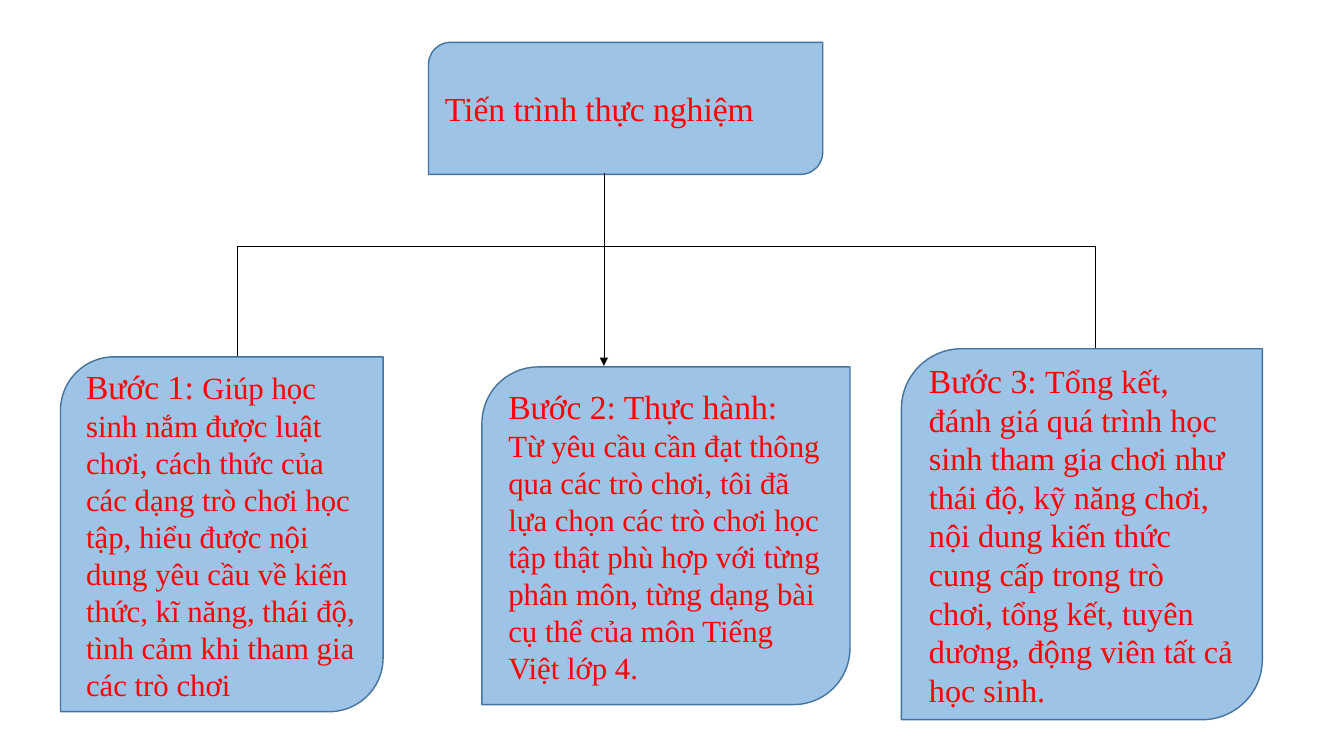
from dataclasses import dataclass

from lxml.etree import SubElement
from pptx import Presentation
from pptx.dml.color import RGBColor
from pptx.enum.shapes import MSO_CONNECTOR, MSO_SHAPE
from pptx.enum.text import MSO_ANCHOR, PP_ALIGN
from pptx.oxml.ns import qn
from pptx.slide import Slide
from pptx.util import Inches, Pt


@dataclass(frozen=True)
class Theme:
    font: str = "Times New Roman"
    text: RGBColor = RGBColor(0xFF, 0x00, 0x00)
    fill: RGBColor = RGBColor(0x9D, 0xC3, 0xE6)
    edge: RGBColor = RGBColor(0x43, 0x73, 0x9E)
    wire: RGBColor = RGBColor(0x00, 0x00, 0x00)
    head: int = 24
    body: int = 22
    large: int = 23


@dataclass(frozen=True)
class Run:
    text: str
    size: int


@dataclass(frozen=True)
class Box:
    left: float
    top: float
    width: float
    height: float
    lines: list[list[Run]]


@dataclass(frozen=True)
class Wire:
    left: float
    top: float
    right: float
    bottom: float
    arrow: bool = False


THEME = Theme()
BAR = 2.44
LEFT, MID, RIGHT = 2.35, 5.99, 10.86

TITLE = Box(4.25, 0.42, 3.91, 1.31, [[Run("Tiến trình thực nghiệm", THEME.head)]])
STEPS = [
    Box(0.6, 3.54, 3.2, 3.52, [[
        Run("Bước 1: ", THEME.head),
        Run("Giúp học sinh nắm được luật chơi, cách thức của các dạng trò chơi "
            "học tập, hiểu được nội dung yêu cầu về kiến thức, kĩ năng, thái độ, "
            "tình cảm khi tham gia các trò chơi", THEME.body),
    ]]),
    Box(4.78, 3.64, 3.65, 3.35, [
        [Run("Bước 2: Thực hành:", THEME.head)],
        [Run("Từ yêu cầu cần đạt thông qua các trò chơi, tôi đã lựa chọn các trò "
             "chơi học tập thật phù hợp với từng phân môn, từng dạng bài cụ thể "
             "của môn Tiếng Việt lớp 4.", THEME.body)],
    ]),
    Box(8.94, 3.46, 3.58, 3.68, [[
        Run("Bước 3: ", THEME.head),
        Run("Tổng kết, đánh giá quá trình học sinh tham gia chơi như thái độ, kỹ "
            "năng chơi, nội dung kiến thức cung cấp trong trò chơi, tổng kết, "
            "tuyên dương, động viên tất cả học sinh.", THEME.large),
    ]]),
]
WIRES = [
    Wire(MID, 1.72, MID, BAR),
    Wire(LEFT, BAR, RIGHT, BAR),
    Wire(LEFT, BAR, LEFT, 3.63, True),
    Wire(MID, BAR, MID, 3.63, True),
    Wire(RIGHT, BAR, RIGHT, 3.6, True),
]


def draw_box(slide: Slide, box: Box) -> None:
    shape = slide.shapes.add_shape(
        MSO_SHAPE.ROUND_2_DIAG_RECTANGLE,
        Inches(box.left), Inches(box.top), Inches(box.width), Inches(box.height),
    )
    shape.shadow.inherit = False
    shape.fill.solid()
    shape.fill.fore_color.rgb = THEME.fill
    shape.line.color.rgb = THEME.edge
    shape.line.width = Pt(1)
    frame = shape.text_frame
    frame.word_wrap = True
    frame.vertical_anchor = MSO_ANCHOR.MIDDLE
    for index, line in enumerate(box.lines):
        para = frame.add_paragraph() if index else frame.paragraphs[0]
        para.alignment = PP_ALIGN.LEFT
        para.font.name = THEME.font
        para.font.color.rgb = THEME.text
        if len(line) == 1:
            para.font.size = Pt(line[0].size)
        for part in line:
            run = para.add_run()
            run.text = part.text
            if len(line) > 1:
                run.font.size = Pt(part.size)


def draw_wire(slide: Slide, wire: Wire) -> None:
    link = slide.shapes.add_connector(
        MSO_CONNECTOR.STRAIGHT,
        Inches(wire.left), Inches(wire.top), Inches(wire.right), Inches(wire.bottom),
    )
    link.line.color.rgb = THEME.wire
    link.line.width = Pt(0.5)
    if wire.arrow:
        SubElement(link.line._get_or_add_ln(), qn("a:tailEnd"), type="triangle")
    SubElement(link._element.spPr, qn("a:effectLst"))


def main() -> None:
    deck = Presentation()
    deck.slide_width, deck.slide_height = Inches(13.33), Inches(7.5)
    slide = deck.slides.add_slide(deck.slide_layouts[6])
    draw_box(slide, TITLE)
    for wire in WIRES:
        draw_wire(slide, wire)
    for step in STEPS:
        draw_box(slide, step)
    deck.save("out.pptx")


if __name__ == "__main__":
    main()
